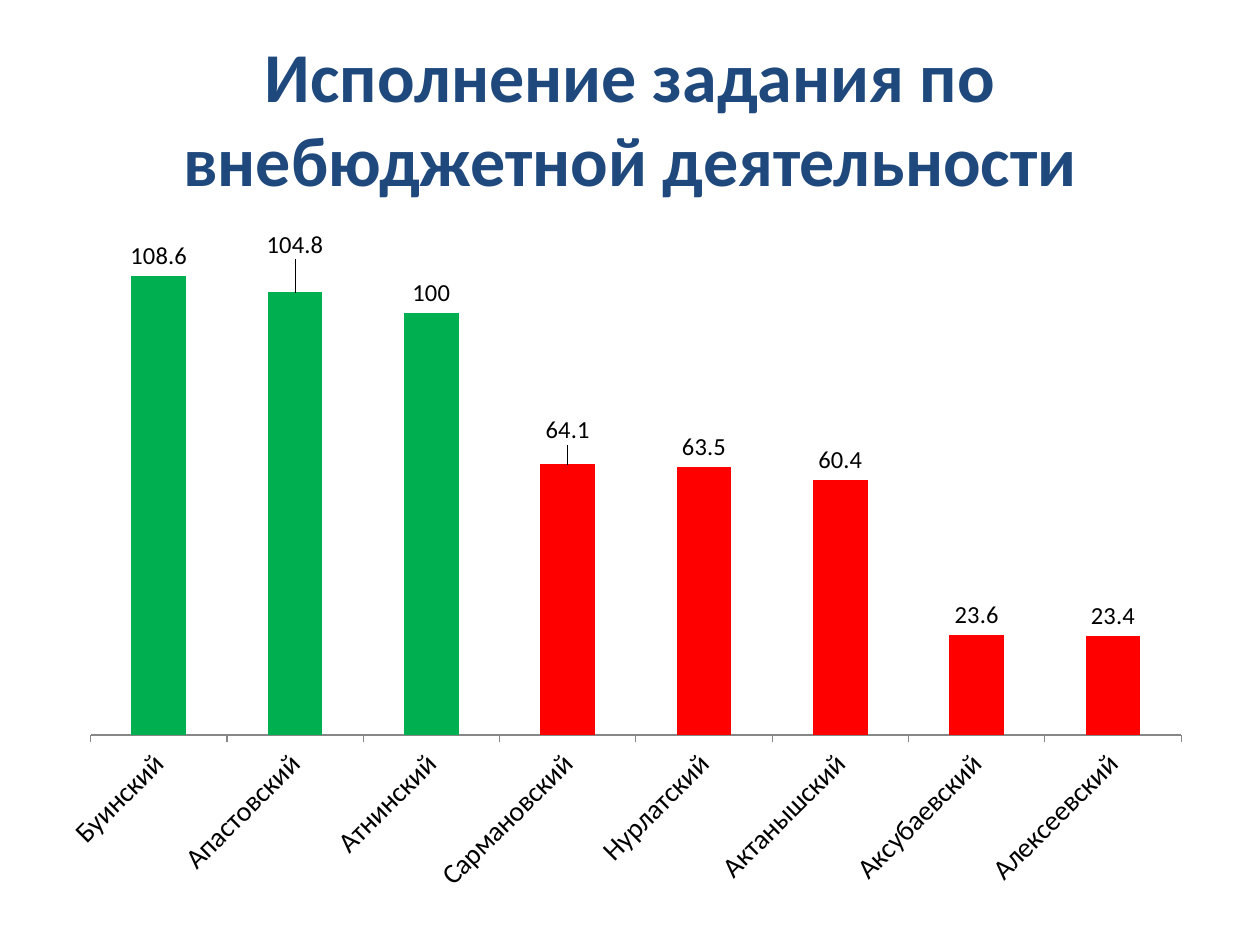
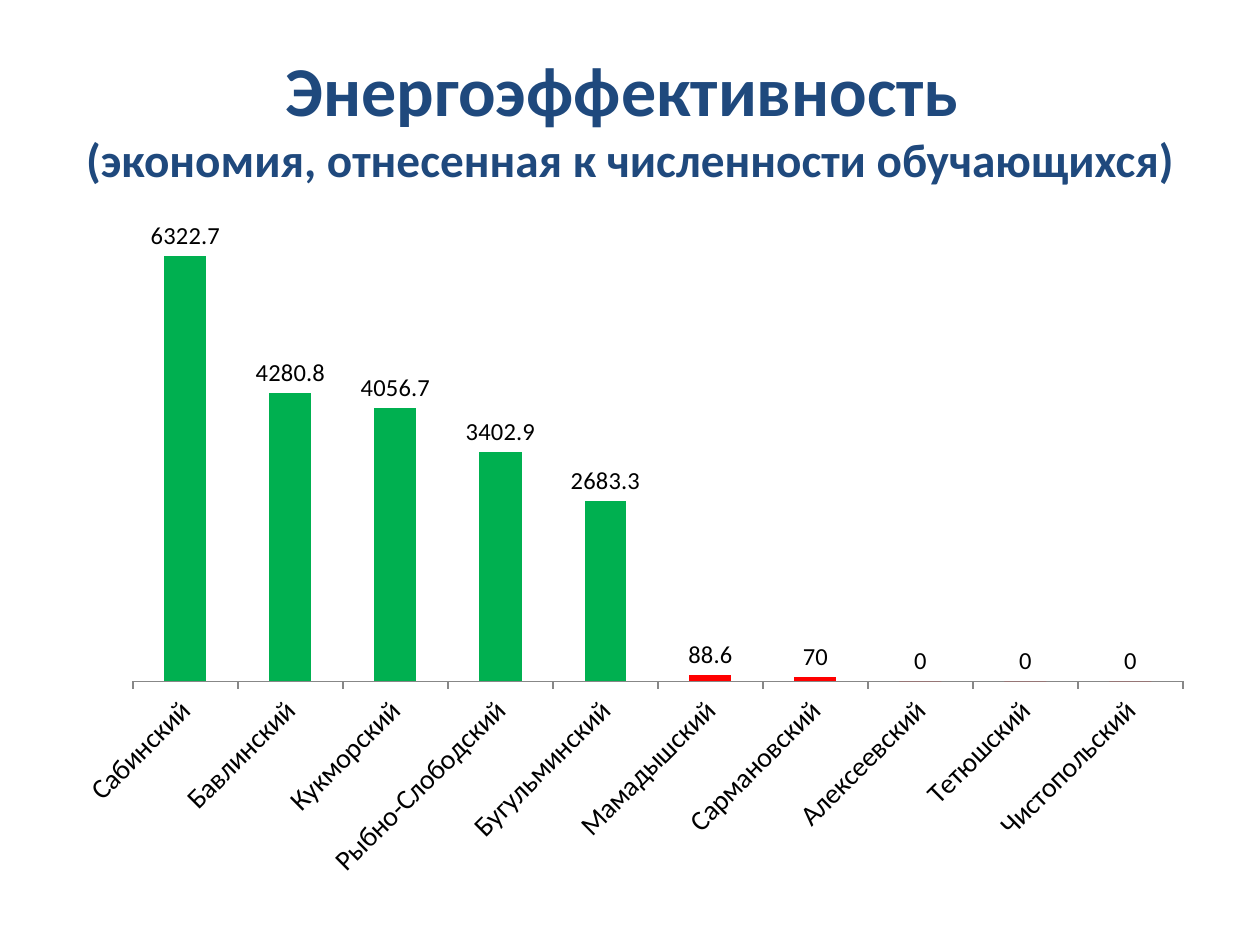
from dataclasses import dataclass, field

from lxml import etree
from pptx import Presentation
from pptx.chart.chart import Chart
from pptx.chart.data import CategoryChartData
from pptx.dml.color import RGBColor
from pptx.enum.chart import XL_CHART_TYPE, XL_LABEL_POSITION, XL_TICK_MARK
from pptx.enum.text import MSO_ANCHOR, PP_ALIGN
from pptx.oxml.ns import qn
from pptx.slide import Slide
from pptx.util import Cm, Pt

COLUMNS = XL_CHART_TYPE.COLUMN_CLUSTERED
ABOVE_BAR = XL_LABEL_POSITION.OUTSIDE_END
TICK_OUT, TICK_NONE = XL_TICK_MARK.OUTSIDE, XL_TICK_MARK.NONE
CENTER, MIDDLE = PP_ALIGN.CENTER, MSO_ANCHOR.MIDDLE

FONT = "Calibri"
NAVY, GREEN, RED = "1F497D", "00B050", "FF0000"
BLACK, AXIS_GRAY = "000000", "878787"
LABEL_SIZE, CATEGORY_SIZE = 14, 16


@dataclass
class Rating:
    """One slide: a heading and the districts ranked by result."""
    heading: str
    heading_sizes: list[int]
    box: tuple[float, float, float, float]   # left, top, width, height in cm
    plot: tuple[float, float, float, float]  # x, y, w, h as parts of the chart
    axis_max: float
    leaders: int                             # number of green columns
    results: dict[str, float]
    # district number -> shift of its value label
    label_shifts: dict[int, tuple[float, float]] = field(default_factory=dict)


RATINGS = [
    Rating(
        "Исполнение задания по внебюджетной деятельности", [40],
        (0.89, 4.32, 23.39, 14), (0.04, 0.02, 0.94, 0.73), 120, 3,
        {"Буинский": 108.6, "Апастовский": 104.8, "Атнинский": 100,
         "Сармановский": 64.1, "Нурлатский": 63.5, "Актанышский": 60.4,
         "Аксубаевский": 23.6, "Алексеевский": 23.4},
        {1: (0, -0.04), 3: (0, -0.02)},
    ),
    Rating(
        "Энергоэффективность \v(экономия, отнесенная к численности обучающихся)",
        [40, 27],
        (1.3, 3.96, 23.01, 13.97), (0.06, 0.02, 0.92, 0.68), 7000, 5,
        {"Сабинский": 6322.7, "Бавлинский": 4280.8, "Кукморский": 4056.7,
         "Рыбно-Слободский": 3402.9, "Бугульминский": 2683.3,
         "Мамадышский": 88.6, "Сармановский": 70, "Алексеевский": 0,
         "Тетюшский": 0, "Чистопольский": 0},
    ),
]


def color(hex_value: str) -> RGBColor:
    return RGBColor.from_string(hex_value)


def style_font(font, size: float, hex_value: str, bold: bool = False) -> None:
    font.name, font.size, font.bold = FONT, Pt(size), bold
    font.color.rgb = color(hex_value)


def manual_layout(**settings) -> etree._Element:
    layout = etree.Element(qn("c:layout"))
    manual = etree.SubElement(layout, qn("c:manualLayout"))
    for tag, value in settings.items():
        etree.SubElement(manual, qn(f"c:{tag}")).set("val", str(value))
    return layout


def add_heading(slide: Slide, rating: Rating) -> None:
    heading = slide.shapes.add_textbox(Cm(1.27), Cm(0.76), Cm(22.86), Cm(3.18))
    frame = heading.text_frame
    frame.word_wrap, frame.vertical_anchor = True, MIDDLE
    frame.text = ""
    paragraph = frame.paragraphs[0]
    paragraph.text = rating.heading
    paragraph.alignment = CENTER
    for run, size in zip(paragraph.runs, rating.heading_sizes):
        style_font(run.font, size, NAVY, bold=True)


def style_axes(chart: Chart, axis_max: float) -> None:
    districts = chart.category_axis
    districts.major_tick_mark, districts.minor_tick_mark = TICK_OUT, TICK_NONE
    districts.format.line.color.rgb = color(AXIS_GRAY)
    districts.format.line.width = Pt(0.75)
    style_font(districts.tick_labels.font, CATEGORY_SIZE, BLACK)
    # Slant the district names by 45 degrees
    body = districts._element.find(f"{qn('c:txPr')}/{qn('a:bodyPr')}")
    body.set("rot", "-2700000")
    body.set("vert", "horz")

    values = chart.value_axis
    values.minimum_scale, values.maximum_scale = 0, axis_max
    values.has_major_gridlines = False
    values.visible = False


def style_columns(chart: Chart, rating: Rating) -> None:
    plot = chart.plots[0]
    plot.gap_width, plot.vary_by_categories = 150, False
    columns = plot.series[0]
    for number in range(len(rating.results)):
        fill = columns.points[number].format.fill
        fill.solid()
        fill.fore_color.rgb = color(GREEN if number < rating.leaders else RED)

    labels = columns.data_labels
    labels.show_value, labels.position = True, ABOVE_BAR
    style_font(labels.font, LABEL_SIZE, BLACK)
    for number, (x, y) in rating.label_shifts.items():
        label = columns.points[number].data_label
        label.position = ABOVE_BAR
        style_font(label.font, LABEL_SIZE, BLACK)
        index = chart.element.xpath(f".//c:dLbl/c:idx[@val='{number}']")[0]
        index.addnext(manual_layout(x=x, y=y))


def add_rating_chart(slide: Slide, rating: Rating) -> None:
    data = CategoryChartData()
    data.categories = list(rating.results)
    data.add_series("Series 1", list(rating.results.values()))
    frame = slide.shapes.add_chart(COLUMNS, *map(Cm, rating.box), data)
    chart = frame.chart
    chart.has_title = chart.has_legend = False
    style_font(chart.font, 10, BLACK)
    style_axes(chart, rating.axis_max)
    style_columns(chart, rating)

    # Fix the inner plot area
    area = chart.element.find(f".//{qn('c:plotArea')}")
    for layout in area.findall(qn("c:layout")):
        area.remove(layout)
    x, y, w, h = rating.plot
    area.insert(0, manual_layout(layoutTarget="inner", xMode="edge",
                                 yMode="edge", x=x, y=y, w=w, h=h))


def main() -> None:
    deck = Presentation()
    deck.slide_width, deck.slide_height = Cm(25.4), Cm(19.05)
    blank = deck.slide_layouts[6]
    for rating in RATINGS:
        slide = deck.slides.add_slide(blank)
        add_heading(slide, rating)
        add_rating_chart(slide, rating)
    deck.save("out.pptx")


if __name__ == "__main__":
    main()
